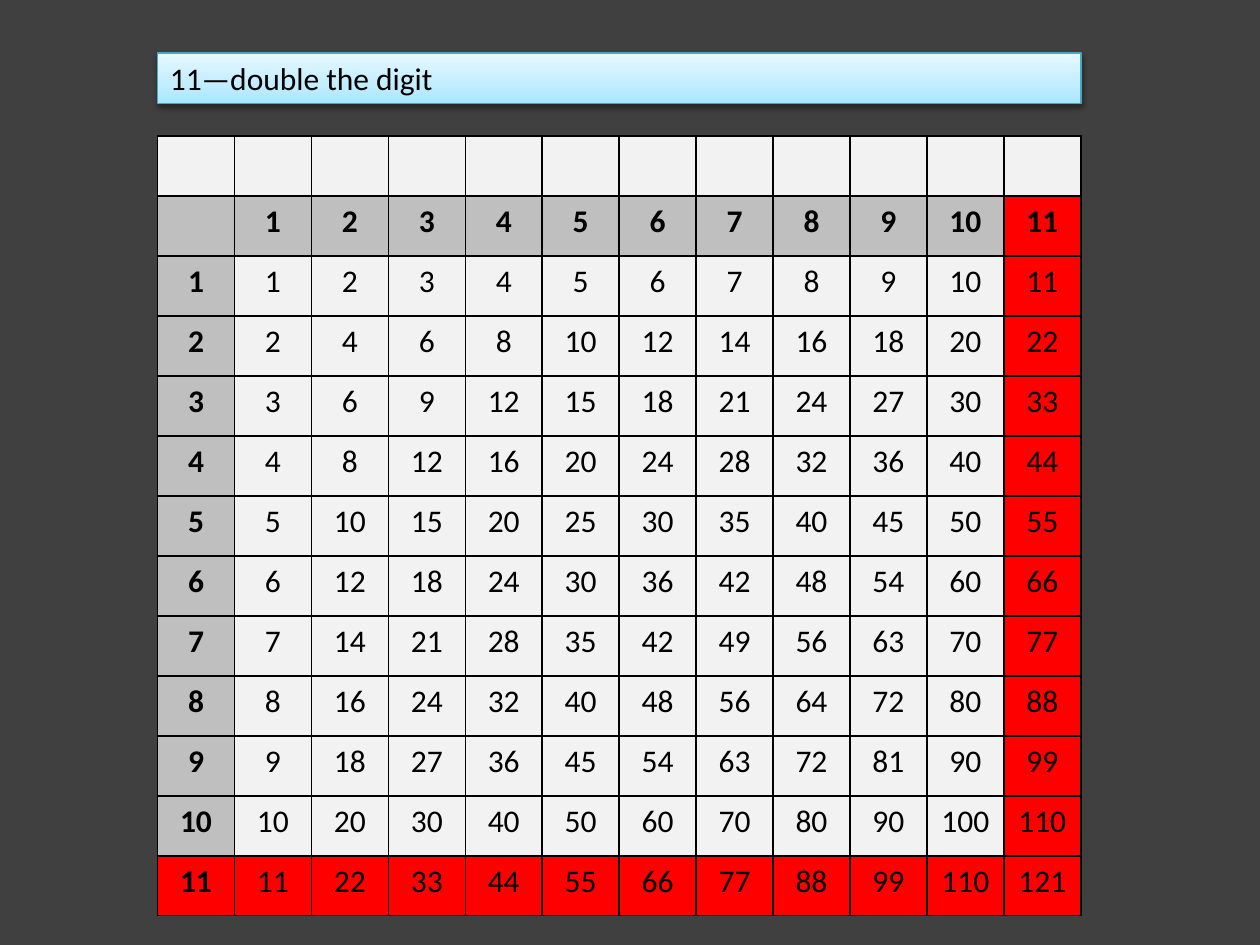
import lxml.etree
import pptx
import pptx.dml.color
import pptx.enum.shapes
import pptx.enum.text
import pptx.oxml
import pptx.oxml.ns
import pptx.util

LARGEST = 11
COLUMNS, ROWS = LARGEST + 1, LARGEST + 2
LEFT, WIDTH = 1.25, 7.33
BANNER_TOP, BANNER_HEIGHT = 0.42, 0.4
GRID_TOP, GRID_HEIGHT = 1.08, 6.19
BLACK, BACKDROP = "000000", "404040"
PLAIN, HEADING, HIGHLIGHT = "F2F2F2", "BFBFBF", "FF0000"
BANNER_EDGE = "46AAC5"
BANNER_STOPS = [(0, "A7E6FF"), (35, "C1EDFF"), (100, "E7F8FF")]


def color(hex_code):
    return pptx.dml.color.RGBColor.from_string(hex_code)


def paint(fill, hex_code):
    fill.solid()
    fill.fore_color.rgb = color(hex_code)


def inches(*lengths):
    return [pptx.util.Inches(length) for length in lengths]


def xml(tag, content, attributes=""):
    namespace = pptx.oxml.ns.nsdecls("a")
    return pptx.oxml.parse_xml(f"<a:{tag} {namespace} {attributes}>{content}</a:{tag}>")


def write(frame, text, align, bold=False):
    paragraph = frame.paragraphs[0]
    paragraph.text = text
    paragraph.alignment = align
    paragraph.font.name = "Calibri"
    paragraph.font.size = pptx.util.Pt(18)
    paragraph.font.bold = bold
    paragraph.font.color.rgb = color(BLACK)


def add_banner(slide, text):
    banner = slide.shapes.add_shape(
        pptx.enum.shapes.MSO_SHAPE.RECTANGLE,
        *inches(LEFT, BANNER_TOP, WIDTH, BANNER_HEIGHT))
    banner.fill.gradient()
    banner.fill.gradient_angle = 90
    properties = banner.element.spPr
    stops = properties.find(".//" + pptx.oxml.ns.qn("a:gsLst"))
    for stop in list(stops):
        stops.remove(stop)
    for share, hex_code in BANNER_STOPS:
        stops.append(xml("gs", f'<a:srgbClr val="{hex_code}"/>', f'pos="{share * 1000}"'))
    banner.line.color.rgb = color(BANNER_EDGE)
    banner.line.width = pptx.util.Pt(0.75)
    blur, distance = pptx.util.Pt(3.1), pptx.util.Pt(1.6)
    properties.append(xml(
        "effectLst",
        f'<a:outerShdw blurRad="{blur}" dist="{distance}" dir="5400000" rotWithShape="0">'
        f'<a:srgbClr val="{BLACK}"><a:alpha val="38000"/></a:srgbClr></a:outerShdw>'))
    banner.text_frame.word_wrap = True
    banner.text_frame.auto_size = pptx.enum.text.MSO_AUTO_SIZE.SHAPE_TO_FIT_TEXT
    banner.text_frame.vertical_anchor = pptx.enum.text.MSO_ANCHOR.TOP
    write(banner.text_frame, text, pptx.enum.text.PP_ALIGN.LEFT)


def cell_text(row, column):
    if row == 0 or (row == 1 and column == 0):
        return ""
    return str(max(row - 1, 1) * max(column, 1))


def cell_color(row, column):
    if row == 0:
        return PLAIN
    if LARGEST in (row - 1, column):
        return HIGHLIGHT
    return HEADING if row == 1 or column == 0 else PLAIN


def add_borders(cell):
    properties = cell._tc.get_or_add_tcPr()
    line = f'<a:solidFill><a:srgbClr val="{BLACK}"/></a:solidFill>'
    for position, side in enumerate(("lnL", "lnR", "lnT", "lnB")):
        properties.insert(position, xml(side, line, f'w="{pptx.util.Pt(1)}"'))


def add_multiplication_table(slide):
    grid = slide.shapes.add_table(
        ROWS, COLUMNS, *inches(LEFT, GRID_TOP, WIDTH, GRID_HEIGHT)).table
    grid.first_row = grid.horz_banding = False
    for row in range(ROWS):
        for column in range(COLUMNS):
            cell = grid.cell(row, column)
            write(cell.text_frame, cell_text(row, column),
                  pptx.enum.text.PP_ALIGN.CENTER, row == 1 or column == 0)
            paint(cell.fill, cell_color(row, column))
            add_borders(cell)


def main():
    deck = pptx.Presentation()
    deck.slide_width, deck.slide_height = inches(10, 7.5)
    slide = deck.slides.add_slide(deck.slide_layouts[6])
    paint(slide.background.fill, BACKDROP)
    add_multiplication_table(slide)
    add_banner(slide, "11—double the digit")
    deck.save("out.pptx")


if __name__ == "__main__":
    main()
